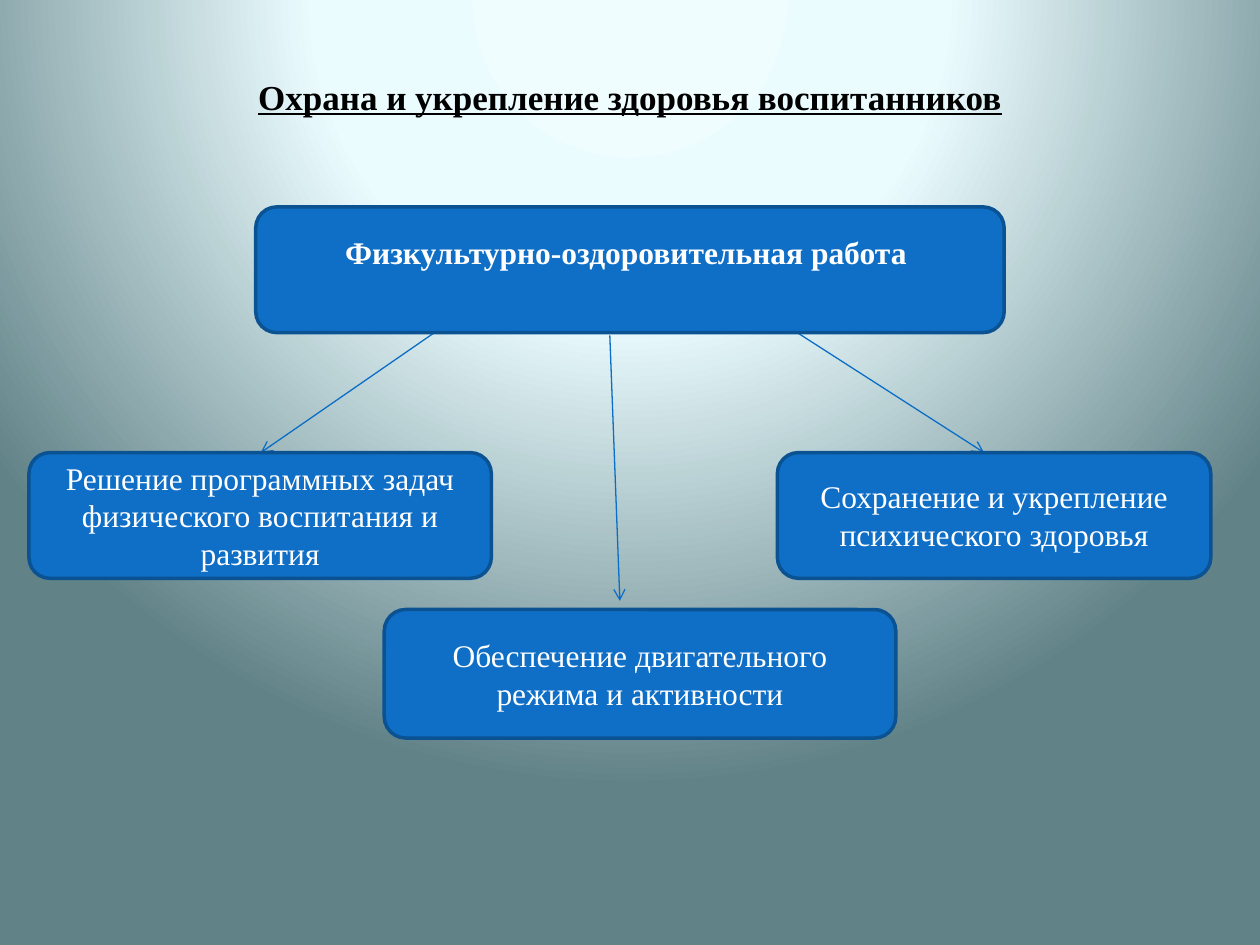
from lxml import etree
from pptx import Presentation
from pptx.dml.color import RGBColor
from pptx.enum.shapes import MSO_CONNECTOR as Connector, MSO_SHAPE as Shape
from pptx.enum.text import MSO_ANCHOR as Anchor, PP_ALIGN as Align
from pptx.oxml import parse_xml
from pptx.oxml.ns import nsdecls, qn
from pptx.util import Inches, Pt

# Content: places are left, top, width, height as shares of the slide
TITLE = "Охрана и укрепление здоровья воспитанников"
TITLE_PLACE = (0.05, 0.04, 0.9, 1 / 6)
BOXES = [
    # text, place, bold, share of the slide kept free below the text
    ("Физкультурно-оздоровительная работа ", (0.203, 0.219, 0.594, 0.133), True, 0.045),
    ("Решение программных задач физического воспитания и развития",
     (0.023, 0.479, 0.367, 0.133), False, 0.007),
    ("Обеспечение двигательного режима и активности",
     (0.305, 0.645, 0.406, 0.136), False, 0.007),
    ("Сохранение и укрепление психического здоровья",
     (0.617, 0.479, 0.344, 0.133), False, 0.007),
]
ARROWS = [  # x, y of the start and of the tip
    (0.398, 0.303, 0.207, 0.479),
    (0.586, 0.312, 0.781, 0.479),
    (0.484, 0.355, 0.492, 0.636),
]
COLORS = {"box": "0F6FC6", "edge": "0B5292", "arrow": "0A6DC6",
          "title": "000000", "text": "FFFFFF"}
BACKDROP = [(0, "EFFDFF"), (40, "EBFCFF"), (100, "618287")]
FONT = "Times New Roman"

deck = Presentation()
deck.slide_width, deck.slide_height = Inches(10), Inches(7.5)
slide = deck.slides.add_slide(deck.slide_layouts[5])


def scale(shares):
    """Turn alternating x and y shares into slide lengths."""
    sides = (deck.slide_width, deck.slide_height)
    return [round(share * sides[i % 2]) for i, share in enumerate(shares)]


def color(name):
    return RGBColor.from_string(COLORS[name])


def write(shape, text, color_name, free_below, **font_format):
    frame = shape.text_frame
    frame.text = text
    frame.word_wrap = True
    frame.vertical_anchor = Anchor.MIDDLE
    frame.margin_bottom = round(free_below * deck.slide_height)
    line = frame.paragraphs[0]
    line.alignment = Align.CENTER
    font = line.runs[0].font
    font.color.rgb = color(color_name)
    for key, value in {"name": FONT, **font_format}.items():
        setattr(font, key, value)


# Radial backdrop centred above the slide
slide.background.fill.gradient()
gradient = slide.background._cSld.find(".//" + qn("a:gradFill"))
stops = "".join(f'<a:gs pos="{pos * 1000}"><a:srgbClr val="{tint}"/></a:gs>'
                for pos, tint in BACKDROP)
gradient.getparent().replace(gradient, parse_xml(
    f'<a:gradFill {nsdecls("a")} rotWithShape="1"><a:gsLst>{stops}</a:gsLst>'
    '<a:path path="circle"><a:fillToRect l="50000" t="-80000" r="50000" b="180000"/>'
    '</a:path></a:gradFill>'))

# Title
title = slide.shapes.title
title.left, title.top, title.width, title.height = scale(TITLE_PLACE)
write(title, TITLE, "title", 0.05, size=Pt(20), bold=True, underline=True)

# Arrows, behind the boxes
for ends in ARROWS:
    arrow = slide.shapes.add_connector(Connector.STRAIGHT, *scale(ends))
    arrow.line.color.rgb = color("arrow")
    arrow.line.width = Pt(0.75)
    etree.SubElement(arrow.line._get_or_add_ln(), qn("a:tailEnd"), type="arrow")
    etree.SubElement(arrow._element.spPr, qn("a:effectLst"))

# Boxes
for text, place, bold, free_below in BOXES:
    box = slide.shapes.add_shape(Shape.ROUNDED_RECTANGLE, *scale(place))
    box.shadow.inherit = False
    box.fill.solid()
    box.fill.fore_color.rgb = color("box")
    box.line.color.rgb = color("edge")
    box.line.width = Pt(2)
    write(box, text, "text", free_below, size=Pt(18), bold=bold)

deck.save("out.pptx")
